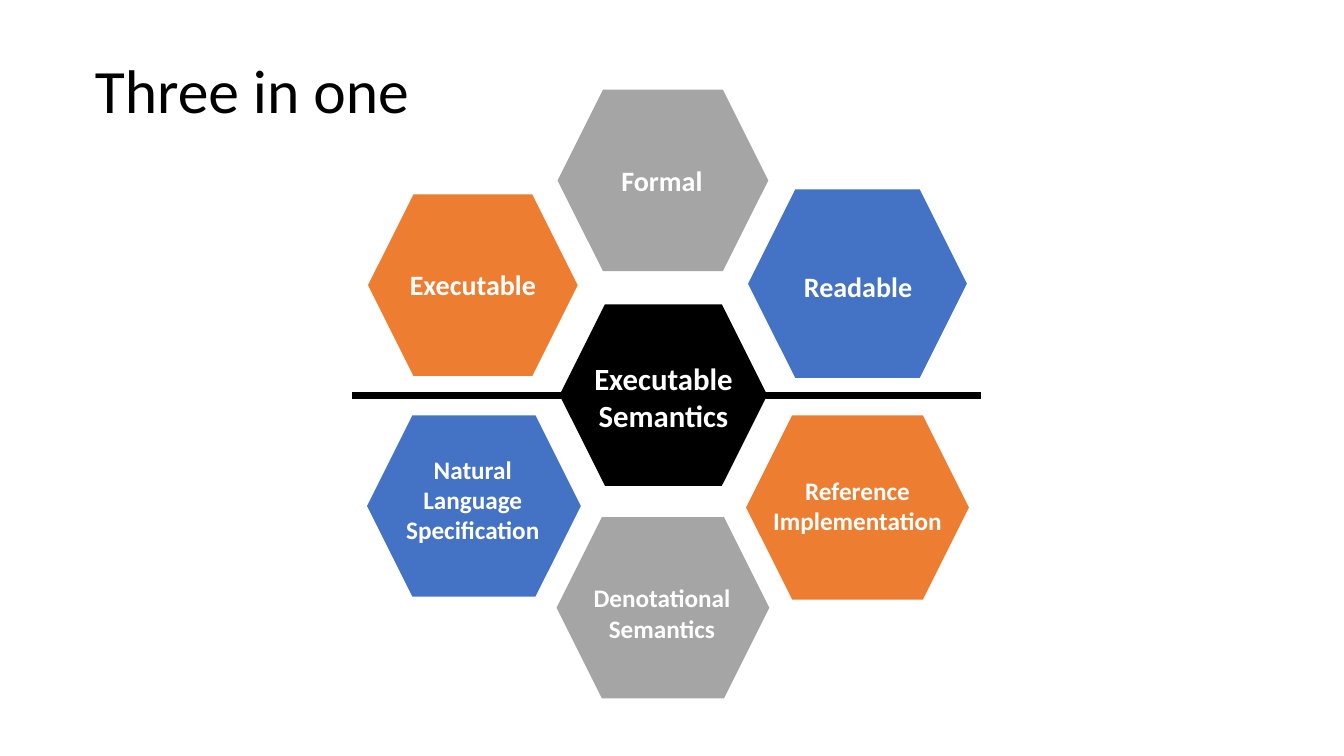
from pptx import Presentation
from pptx import util as u
from pptx.dml.color import RGBColor
from pptx.enum import shapes, text
from pptx.oxml.ns import qn
from lxml import etree

# Content: lengths in px, 100 px to the inch
PX = 9144
SLIDE_SIZE = (1333, 750)
FONT = "Calibri"
BLACK, WHITE = "000000", "FFFFFF"
ORANGE, GRAY, BLUE = "ED7D31", "A5A5A5", "4472C4"

TITLE = ("Three in one", (89, 20, 1150, 145))

# paragraphs, fill, hexagon box, label box, text size
HEXAGONS = [
    (["Executable"], ORANGE, (365, 193, 208, 180), (375, 264, 188, 36), 20),
    (["Formal"], GRAY, (553, 89, 209, 180), (570, 155, 173, 47), 20),
    (["Readable"], BLUE, (742, 188, 217, 187), (757, 259, 188, 49), 20),
    (["Executable", "Semantics"], BLACK,
     (555, 302, 206, 180), (564, 356, 188, 76), 22),
    (["Reference", "Implementation"], ORANGE,
     (740, 412, 221, 183), (747, 469, 207, 65), 18),
    (["Denotational Semantics"], GRAY,
     (552, 513, 211, 180), (567, 577, 179, 62), 18),
    (["Natural", "Language", "Specification"], BLUE,
     (364, 412, 212, 180), (381, 450, 176, 91), 18),
]

DIVIDER_Y, DIVIDER_LENGTH, DIVIDER_WIDTH = 392, 245, 5
DIVIDER_STARTS = (349, 728)


def color(value):
    return RGBColor.from_string(value)


def emu(lengths):
    return [u.Emu(length * PX) for length in lengths]


def add_text(page, box, lines, inset, paragraph_format, font_format, ink):
    frame = page.shapes.add_textbox(*emu(box)).text_frame
    margin = u.Emu(inset * PX)
    frame_format = {
        "word_wrap": True, "vertical_anchor": text.MSO_ANCHOR.MIDDLE,
        "margin_left": margin, "margin_right": margin,
        "margin_top": margin, "margin_bottom": margin,
    }
    for name, value in frame_format.items():
        setattr(frame, name, value)
    for index, line in enumerate(lines):
        para = frame.add_paragraph() if index else frame.paragraphs[0]
        for name, value in paragraph_format.items():
            setattr(para, name, value)
        span = para.add_run()
        span.text = line
        for name, value in font_format.items():
            setattr(span.font, name, value)
        span.font.color.rgb = color(ink)


def add_hexagon(page, box, fill):
    hexagon = page.shapes.add_shape(shapes.MSO_SHAPE.HEXAGON, *emu(box))
    hexagon.shadow.inherit = False
    hexagon.fill.solid()
    hexagon.fill.fore_color.rgb = color(fill)
    hexagon.line.fill.background()


def add_divider(page, left):
    ends = emu((left, DIVIDER_Y, left + DIVIDER_LENGTH, DIVIDER_Y))
    divider = page.shapes.add_connector(shapes.MSO_CONNECTOR.STRAIGHT, *ends)
    divider.line.color.rgb = color(BLACK)
    divider.line.width = u.Pt(DIVIDER_WIDTH)
    etree.SubElement(divider._element.spPr, qn("a:effectLst"))


def main():
    deck = Presentation()
    deck.slide_width, deck.slide_height = emu(SLIDE_SIZE)
    page = deck.slides.add_slide(deck.slide_layouts[6])

    # Title
    title, title_box = TITLE
    add_text(page, title_box, [title], 5, {"line_spacing": 0.9},
             {"name": FONT, "size": u.Pt(44)}, BLACK)

    # Hexagons with their labels
    for lines, fill, box, label_box, size in HEXAGONS:
        add_hexagon(page, box, fill)
        add_text(page, label_box, lines, 2,
                 {"alignment": text.PP_ALIGN.CENTER},
                 {"name": FONT, "size": u.Pt(size), "bold": True}, WHITE)

    # Dividing line on both sides of the centre
    for left in DIVIDER_STARTS:
        add_divider(page, left)

    deck.save("out.pptx")


if __name__ == "__main__":
    main()
